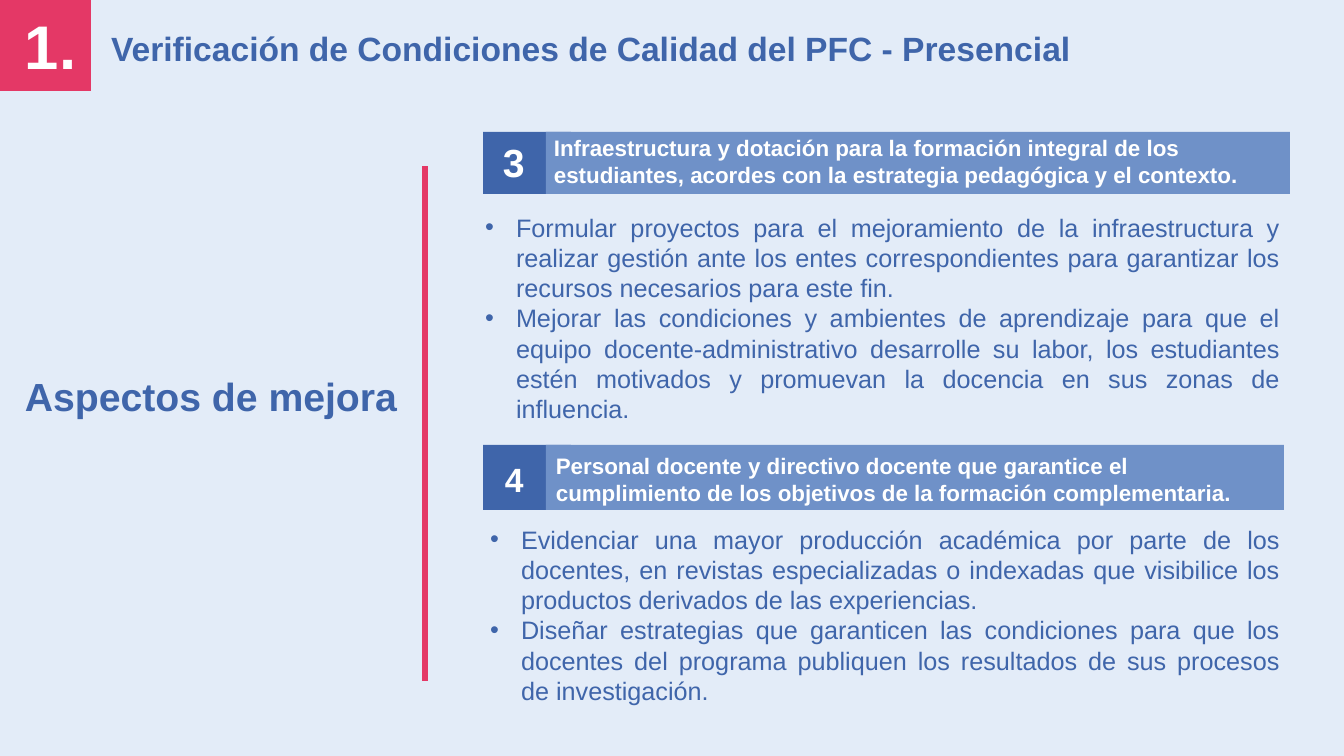
from pptx import Presentation
from pptx.dml.color import RGBColor
from pptx.enum.shapes import MSO_SHAPE
from pptx.enum.text import MSO_ANCHOR, MSO_AUTO_SIZE, PP_ALIGN
from pptx.oxml import parse_xml
from pptx.oxml.ns import nsdecls
from pptx.util import Emu, Pt

PX = 914400 / 100.8
BACKGROUND = RGBColor(0xE3, 0xEC, 0xF8)
PINK = RGBColor(0xE4, 0x38, 0x66)
BLUE = RGBColor(0x3F, 0x65, 0xAA)
LIGHT_BLUE = RGBColor(0x6F, 0x91, 0xC8)
WHITE = RGBColor(0xFF, 0xFF, 0xFF)


def place(sp, box):
    for name, length in zip(("left", "top", "width", "height"), box):
        setattr(sp, name, Emu(round(length * PX)))


def write(sp, box, lines, size, color, bold=True, align=PP_ALIGN.LEFT):
    place(sp, box)
    tf = sp.text_frame
    frame = {"word_wrap": True, "auto_size": MSO_AUTO_SIZE.NONE, "vertical_anchor": MSO_ANCHOR.TOP}
    for name, value in frame.items():
        setattr(tf, name, value)
    tf.text = "\n".join(lines)
    for p in tf.paragraphs:
        for name, value in {"alignment": align, "space_before": Pt(0)}.items():
            setattr(p, name, value)
        font = p.runs[0].font
        for name, value in {"name": "Arial", "size": Pt(size), "bold": bold}.items():
            setattr(font, name, value)
        font.color.rgb = color


prs = Presentation()
prs.slide_width, prs.slide_height = Emu(round(1344 * PX)), Emu(round(756 * PX))
s = prs.slides.add_slide(prs.slide_layouts[3])
s.background.fill.solid()
s.background.fill.fore_color.rgb = BACKGROUND

rectangles = [
    ((0, 0, 91, 91), PINK),
    ((422, 166, 6, 515), PINK),
    ((483, 132, 88, 62), BLUE),
    ((546, 132, 744, 62), LIGHT_BLUE),
    ((483, 445, 88, 65), BLUE),
    ((546, 445, 738, 65), LIGHT_BLUE),
]
for box, color in rectangles:
    sp = s.shapes.add_shape(MSO_SHAPE.RECTANGLE, 0, 0, 0, 0)
    place(sp, box)
    sp.shadow.inherit = False
    sp.fill.solid()
    sp.fill.fore_color.rgb = color
    sp.line.fill.background()

write(s.shapes.title, (101, 23, 1006, 50),
      ["Verificación de Condiciones de Calidad del PFC - Presencial"], 24, BLUE)

labels = [
    ((15, 3, 77, 85), "1.", 44, WHITE),
    ((15, 367, 402, 57), "Aspectos de mejora", 28, BLUE),
    ((493, 133, 38, 57), "3", 28, WHITE),
    ((544, 129, 746, 65), "Infraestructura y dotación para la formación integral de los "
     "estudiantes, acordes con la estrategia pedagógica y el contexto.", 16, WHITE),
    ((495, 454, 38, 50), "4", 24, WHITE),
    ((546, 447, 741, 65), "Personal docente y directivo docente que garantice el "
     "cumplimiento de los objetivos de la formación complementaria.", 16, WHITE),
]
for box, text, size, color in labels:
    write(s.shapes.add_textbox(0, 0, 0, 0), box, [text], size, color)

lists = [
    (1, (475, 207, 815, 224), [
        "Formular proyectos para el mejoramiento de la infraestructura y realizar gestión "
        "ante los entes correspondientes para garantizar los recursos necesarios para este fin.",
        "Mejorar las condiciones y ambientes de aprendizaje para que el equipo "
        "docente-administrativo desarrolle su labor, los estudiantes estén motivados "
        "y promuevan la docencia en sus zonas de influencia."]),
    (2, (480, 519, 810, 194), [
        "Evidenciar una mayor producción académica por parte de los docentes, en revistas "
        "especializadas o indexadas que visibilice los productos derivados de las experiencias.",
        "Diseñar estrategias que garanticen las condiciones para que los docentes del "
        "programa publiquen los resultados de sus procesos de investigación."]),
]
for idx, box, lines in lists:
    sp = s.placeholders[idx]
    write(sp, box, lines, 18, BLUE, False, PP_ALIGN.JUSTIFY)
    for p in sp.text_frame.paragraphs:
        pPr = p._p.get_or_add_pPr()
        for name, length in {"marL": 31, "indent": -31}.items():
            pPr.set(name, str(round(length * PX)))
        pPr.append(parse_xml(f'<a:buFont {nsdecls("a")} typeface="Arial"/>'))
        pPr.append(parse_xml(f'<a:buChar {nsdecls("a")} char="•"/>'))

prs.save("out.pptx")
